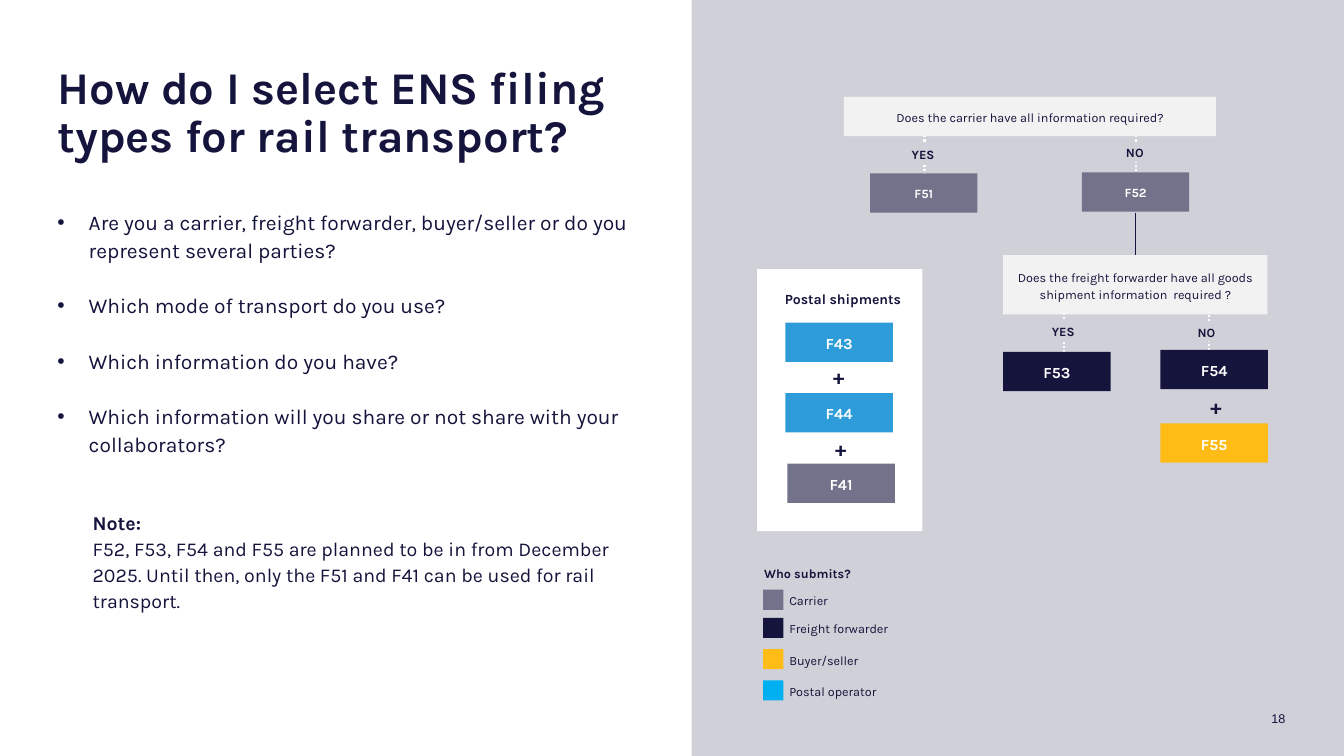
import pptx
import pptx.dml.color
import pptx.enum.dml
import pptx.enum.shapes
import pptx.enum.text
import pptx.oxml
import pptx.oxml.ns
import pptx.util

Pt = pptx.util.Pt
Align = pptx.enum.text.PP_ALIGN
Anchor = pptx.enum.text.MSO_ANCHOR
Form = pptx.enum.shapes.MSO_SHAPE
hue = pptx.dml.color.RGBColor.from_string

NAVY, GREY, PALE, MIST = "14143C", "72728A", "D0D0D8", "F2F2F2"
GOLD, BLUE, SKY, WHITE = "FFBB16", "2E9CD9", "00B0F0", "FFFFFF"

deck = pptx.Presentation()
deck.slide_width = pptx.util.Inches(13.33)
deck.slide_height = pptx.util.Inches(7.5)
slide = deck.slides.add_slide(deck.slide_layouts[1])

# Grid: 133.3 columns by 75 rows of square cells
CELL = deck.slide_height / 75


def write(item, lines, size, color=NAVY, bold=False, align=Align.CENTER,
          anchor=Anchor.MIDDLE, inset=True, lead=1.11, font="Karla"):
    """Fill the text frame of a shape, one paragraph per line."""
    frame = item.text_frame
    frame.word_wrap = True
    frame.auto_size = pptx.enum.text.MSO_AUTO_SIZE.NONE
    frame.vertical_anchor = anchor
    if not inset:
        frame.margin_left = frame.margin_right = 0
        frame.margin_top = frame.margin_bottom = 0
    frame.text = "\n".join(lines)
    for para in frame.paragraphs:
        para.alignment = align
        para.line_spacing = lead
        para.space_before = Pt(0)
        para.font.name = font
        para.font.size = Pt(size)
        para.font.bold = bold
        para.font.color.rgb = hue(color)
    return frame.paragraphs


def place(col, row, wide, high, fill=None, form=Form.RECTANGLE):
    """Add a filled shape, or a text box when there is no fill."""
    area = [round(n * CELL) for n in (col, row, wide, high)]
    if fill is None:
        return slide.shapes.add_textbox(*area)
    item = slide.shapes.add_shape(form, *area)
    item.shadow.inherit = False
    item.fill.solid()
    item.fill.fore_color.rgb = hue(fill)
    item.line.fill.background()
    return item


# Right-hand panel, behind the placeholders
panel = place(68.6, 0, 64.7, 75, PALE)
slide.shapes._spTree.insert(2, panel._element)

# Title and bullet list
title, body = slide.placeholders
for item, row, high in ((title, 6.5, 5.7), (body, 20.5, 46.3)):
    item.left, item.top = round(5.7 * CELL), round(row * CELL)
    item.width, item.height = round(59.1 * CELL), round(high * CELL)
write(title, ["How do I select ENS filing types for rail transport?"], 32.4,
      bold=True, align=Align.LEFT, anchor=Anchor.TOP, inset=False, lead=0.89)
asks = [
    "Are you a carrier, freight forwarder, buyer/seller or do you represent several parties?",
    "Which mode of transport do you use?",
    "Which information do you have?",
    "Which information will you share or not share with your collaborators?",
]
for para in write(body, asks, 15, align=Align.LEFT, anchor=Anchor.TOP, inset=False):
    para.space_after = Pt(19.7)
    props = para._p.get_or_add_pPr()
    props.set("marL", str(round(3.1 * CELL)))
    props.set("indent", str(round(-3.1 * CELL)))

# Note
note = write(place(8.2, 49.9, 57.3, 11.1), [
    "Note:",
    "F52, F53, F54 and F55 are planned to be in from December 2025. "
    "Until then, only the F51 and F41 can be used for rail transport.",
], 14, align=Align.LEFT, anchor=Anchor.TOP)
note[0].font.bold = True

# Connectors: column, start row, end row, colour, width, dotted
for col, top, end, color, width, dots in (
        (112.6, 21.1, 25.3, NAVY, 0.5, False),
        (91.7, 13, 18, WHITE, 1.5, True),
        (112.7, 13, 17.5, WHITE, 1.5, True),
        (105.5, 30.6, 35.6, WHITE, 1.5, True),
        (119.9, 30.8, 35.4, WHITE, 1.5, True)):
    line = slide.shapes.add_connector(
        pptx.enum.shapes.MSO_CONNECTOR.STRAIGHT,
        *[round(n * CELL) for n in (col, top, col, end)])
    line.line.color.rgb = hue(color)
    line.line.width = Pt(width)
    if dots:
        line.line.dash_style = pptx.enum.dml.MSO_LINE.ROUND_DOT
    line._element.spPr.append(
        pptx.oxml.parse_xml("<a:effectLst %s/>" % pptx.oxml.ns.nsdecls("a")))

# Answers on the dotted lines
for word, col, row in (("YES", 89.9, 14.3), ("NO", 110.9, 14.1),
                       ("YES", 103.8, 31.8), ("NO", 118, 31.9)):
    place(col, row, 3.4, 2, PALE, Form.OVAL)
    write(place(col - 0.3, row + 0.15, 3.9, 1.5), [word], 9, bold=True,
          anchor=Anchor.TOP, inset=False)

# Questions
for text, *area in (
        ("Does the carrier have all information required?", 83.7, 9.6, 36.9, 3.9),
        ("Does the freight forwarder have all goods shipment information  required ?",
         99.5, 25.3, 26.2, 5.9)):
    write(place(*area, MIST), [text], 9)

# Postal card
place(75.1, 26.7, 16.4, 26, WHITE)
write(place(77, 28.6, 13.2, 1.7), ["Postal shipments"], 10, bold=True,
      anchor=Anchor.TOP, inset=False)

# Filing types
for code, col, row, fill, size in (
        ("F51", 86.3, 17.2, GREY, 9), ("F52", 107.3, 17.1, GREY, 9),
        ("F53", 99.5, 34.9, NAVY, 11), ("F54", 115.1, 34.7, NAVY, 11),
        ("F55", 115.1, 42, GOLD, 11), ("F43", 77.9, 32, BLUE, 11),
        ("F44", 77.9, 39, BLUE, 11), ("F41", 78.1, 46, GREY, 11)):
    write(place(col, row, 10.65, 3.9, fill), [code], size, WHITE, bold=True)

# Plus signs
for col, row in ((118.1, 38.8), (80.7, 35.8), (80.9, 42.9)):
    write(place(col, row, 5, 2.5), ["+"], 15, bold=True,
          anchor=Anchor.TOP, inset=False)

# Legend
write(place(74.8, 55.4, 18.1, 2.9), ["Who submits?"], 9, bold=True, align=Align.LEFT)
for name, row, fill in (("Carrier", 58.5, GREY), ("Freight forwarder", 61.3, NAVY),
                        ("Buyer/seller", 64.4, GOLD), ("Postal operator", 67.5, SKY)):
    place(75.7, row, 2, 2, fill)
    write(place(77.3, row - 0.4, 16.3, 2.8), [name], 9, align=Align.LEFT)

# Page number
write(place(110.5, 70.2, 17, 1.8), ["18"], 9, align=Align.RIGHT,
      anchor=Anchor.BOTTOM, inset=False, lead=1.0, font="Arial")

deck.save("out.pptx")
